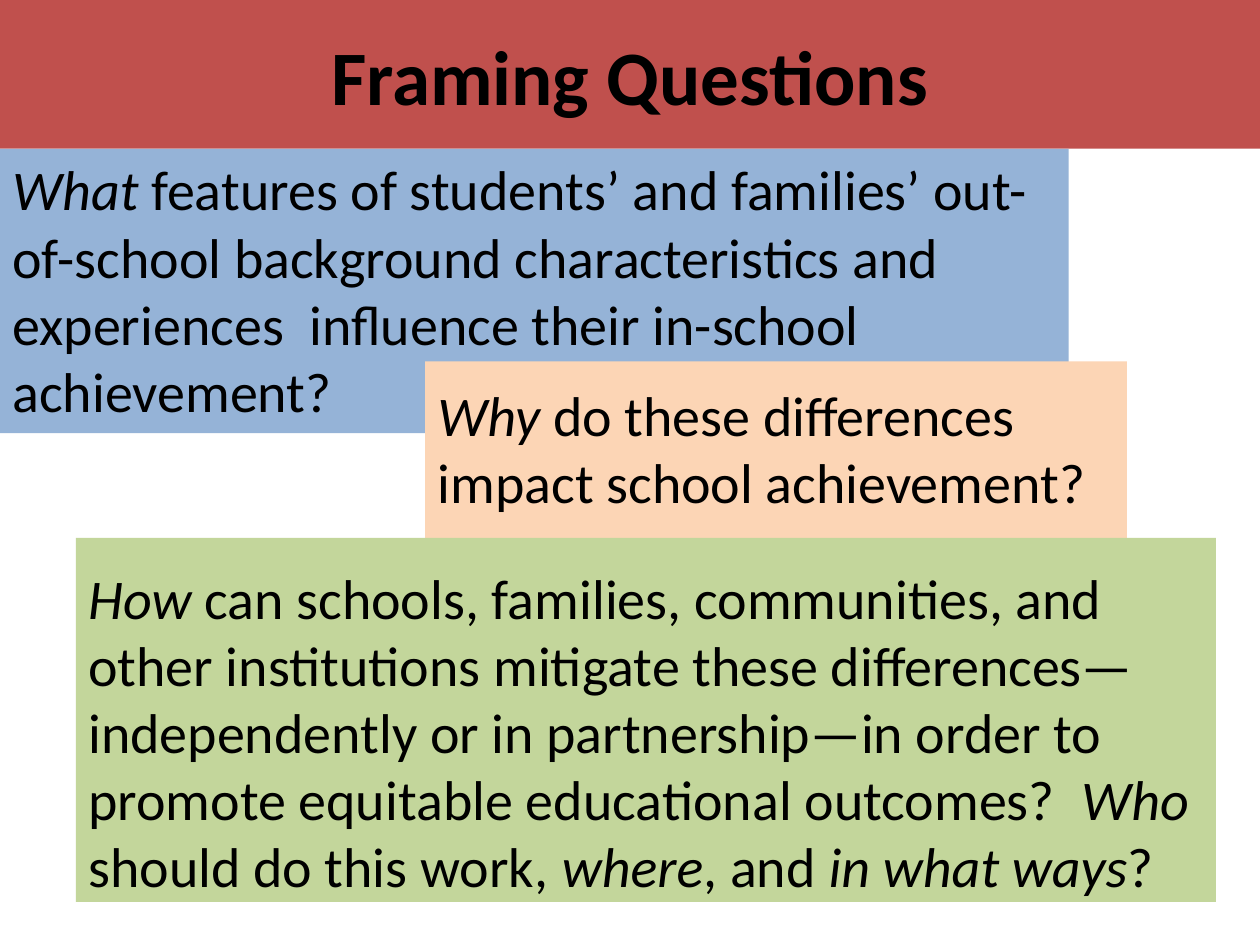
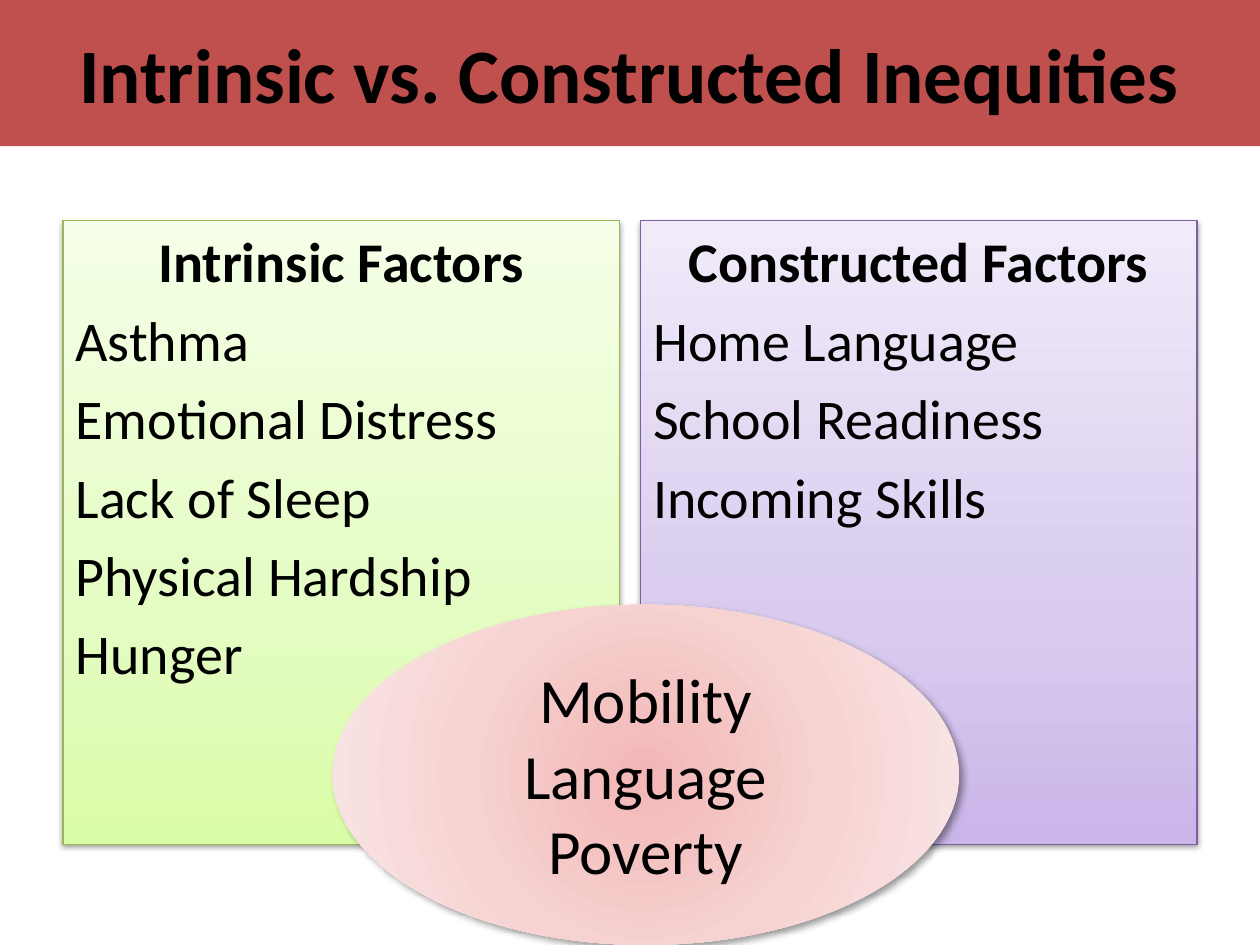
from lxml.etree import SubElement
from pptx import Presentation
from pptx.dml.color import RGBColor
from pptx.enum.shapes import MSO_SHAPE
from pptx.enum.text import MSO_ANCHOR, MSO_AUTO_SIZE, PP_ALIGN
from pptx.oxml.ns import qn
from pptx.util import Pt

FONT = "Calibri"
COLORS = {
    "text": "000000", "band": "C0504D", "shadow": "000000",
    "what": "95B3D7", "why": "FCD5B5", "how": "C3D69B",
    "intrinsic_line": "98B955", "constructed_line": "7D60A0",
}
GRADIENTS = {
    "intrinsic": [(0, "DAFDA7"), (35, "E4FCC2"), (100, "F5FFE7")],
    "constructed": [(0, "C9B5E8"), (35, "D8CBEE"), (100, "F0EAF9")],
    "shared": [(0, "F2B7B6"), (50, "F6D2D1"), (100, "FAE8E8")],
}


def rgb(name):
    return RGBColor.from_string(COLORS[name])


def sub(parent, tag, **attrs):
    return SubElement(parent, qn(tag), {k: str(v) for k, v in attrs.items()})


def place(sp, box):
    sp.left, sp.top, sp.width, sp.height = [Pt(v) for v in box]


def solid_fill(sp, color):
    sp.fill.solid()
    sp.fill.fore_color.rgb = rgb(color)


def gradient_fill(sp, stops, radial=False):
    grad = sub(sp._element.spPr, "a:gradFill", rotWithShape=1)
    gs_lst = sub(grad, "a:gsLst")
    for pos, color in stops:
        gs = sub(gs_lst, "a:gs", pos=pos * 1000)
        sub(gs, "a:srgbClr", val=color)
    if radial:
        center = sub(grad, "a:path", path="circle")
        sub(center, "a:fillToRect", l=50000, t=50000, r=50000, b=50000)
    else:
        sub(grad, "a:lin", ang=270 * 60000, scaled=0)


def add_shadow(sp, alpha, blur, dist, angle):
    effects = sub(sp._element.spPr, "a:effectLst")
    shadow = sub(effects, "a:outerShdw", blurRad=Pt(blur), dist=Pt(dist),
                 dir=angle * 60000, rotWithShape=0)
    color = sub(shadow, "a:srgbClr", val=COLORS["shadow"])
    sub(color, "a:alpha", val=alpha * 1000)


def prepare_text(sp, insets=(7.2, 3.6, 7.2, 3.6)):
    tf = sp.text_frame
    tf.word_wrap = True
    tf.auto_size = MSO_AUTO_SIZE.NONE
    tf.margin_left, tf.margin_top, tf.margin_right, tf.margin_bottom = [
        Pt(v) for v in insets]
    return tf


def next_paragraph(tf, index):
    return tf.add_paragraph() if index else tf.paragraphs[0]


def add_run(p, text, size=32, bold=False, italic=False):
    r = p.add_run()
    r.text = text
    r.font.name, r.font.size = FONT, Pt(size)
    r.font.bold, r.font.italic = bold, italic
    r.font.color.rgb = rgb("text")


def title_band(s, text, height):
    sp = s.shapes.title
    place(sp, (0, 0, 720, height))
    solid_fill(sp, "band")
    tf = prepare_text(sp)
    tf.vertical_anchor = MSO_ANCHOR.MIDDLE
    p = tf.paragraphs[0]
    p.alignment = PP_ALIGN.CENTER
    add_run(p, text, 44, bold=True)


def question_box(s, box, color, runs, insets=(7.2, 3.6, 7.2, 3.6), spacing=0):
    sp = s.shapes.add_textbox(*[Pt(v) for v in box])
    solid_fill(sp, color)
    p = prepare_text(sp, insets).paragraphs[0]
    p.space_before = p.space_after = Pt(spacing)
    for text, italic in runs:
        add_run(p, text, italic=italic)


def factor_panel(sp, box, kind, heading, factors):
    place(sp, box)
    gradient_fill(sp, GRADIENTS[kind])
    sp.line.color.rgb = rgb(kind + "_line")
    sp.line.width = Pt(0.75)
    add_shadow(sp, 38, 3.1, 1.6, 90)
    tf = prepare_text(sp)
    for i, text in enumerate([heading] + factors):
        p = next_paragraph(tf, i)
        p.alignment = PP_ALIGN.LEFT if i else PP_ALIGN.CENTER
        pPr = p._p.get_or_add_pPr()
        pPr.set("marL", str(Pt(27)))
        pPr.set("indent", str(Pt(-27)))
        sub(pPr, "a:buNone")
        add_run(p, text, bold=i == 0)


def shared_oval(s, box, factors):
    sp = s.shapes.add_shape(MSO_SHAPE.OVAL, *[Pt(v) for v in box])
    gradient_fill(sp, GRADIENTS["shared"], radial=True)
    sp.line.fill.background()
    add_shadow(sp, 40, 4, 3, 45)
    tf = prepare_text(sp)
    tf.vertical_anchor = MSO_ANCHOR.TOP
    for i, text in enumerate(factors):
        p = next_paragraph(tf, i)
        p.alignment = PP_ALIGN.CENTER
        add_run(p, text, 36)


def framing_slide(prs):
    s = prs.slides.add_slide(prs.slide_layouts[5])
    title_band(s, "Framing Questions", 85)
    question_box(s, (0, 85, 610.6, 162.5), "what", [
        ("What", True),
        (" features of students’ and families’ out-of-school background "
         "characteristics and experiences  influence their in-school "
         "achievement?", False),
    ])
    question_box(s, (243, 206.5, 401, 110), "why", [
        ("Why ", True),
        ("do these differences impact school achievement?", False),
    ], (7.2, 10.8, 7.2, 21.6), 12)
    question_box(s, (43.3, 307.4, 651.5, 208), "how", [
        ("How ", True),
        ("can schools, families, communities, and other institutions mitigate "
         "these differences—independently or in partnership—in order to "
         "promote equitable educational outcomes?  ", False),
        ("Who", True),
        (" should do this work, ", False),
        ("where", True),
        (", and ", False),
        ("in what ways", True),
        ("?", False),
    ], (7.2, 14.4, 7.2, 0), 12)


def inequities_slide(prs):
    s = prs.slides.add_slide(prs.slide_layouts[3])
    title_band(s, "Intrinsic vs. Constructed Inequities", 83.5)
    margin, top, width, height = 36, 126, 318, 356.4
    factor_panel(s.placeholders[1], (margin, top, width, height), "intrinsic",
                 "Intrinsic Factors",
                 ["Asthma", "Emotional Distress", "Lack of Sleep",
                  "Physical Hardship", "Hunger"])
    factor_panel(s.placeholders[2], (720 - margin - width, top, width, height),
                 "constructed", "Constructed Factors",
                 ["Home Language", "School Readiness", "Incoming Skills"])
    shared_oval(s, (190, 345.6, 358, 194.4),
                ["Mobility", "Language", "Poverty"])


def main():
    prs = Presentation()
    prs.slide_width, prs.slide_height = Pt(720), Pt(540)
    framing_slide(prs)
    inequities_slide(prs)
    prs.save("out.pptx")


if __name__ == "__main__":
    main()
